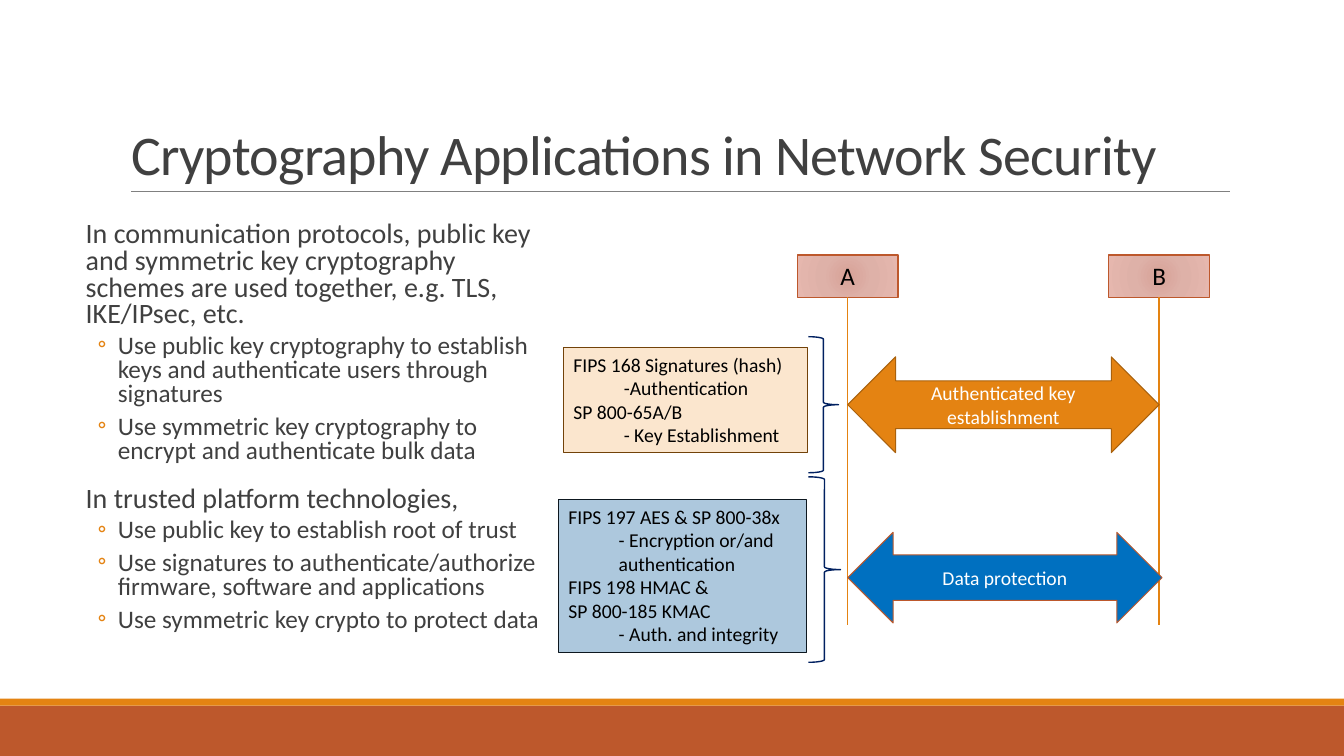
"""Build the slide on cryptography applications in network security."""
from lxml import etree
from pptx import Presentation
from pptx.dml.color import RGBColor
from pptx.enum.shapes import MSO_CONNECTOR, MSO_SHAPE
from pptx.enum.text import MSO_ANCHOR, MSO_AUTO_SIZE, PP_ALIGN
from pptx.oxml import parse_xml
from pptx.oxml.ns import qn
from pptx.util import Pt

RECTANGLE, BRACE = MSO_SHAPE.RECTANGLE, MSO_SHAPE.RIGHT_BRACE
DOUBLE_ARROW = MSO_SHAPE.LEFT_RIGHT_ARROW
STRAIGHT = MSO_CONNECTOR.STRAIGHT
TOP, MIDDLE, BOTTOM = MSO_ANCHOR.TOP, MSO_ANCHOR.MIDDLE, MSO_ANCHOR.BOTTOM
LEFT, CENTER = PP_ALIGN.LEFT, PP_ALIGN.CENTER
FIXED, GROW = MSO_AUTO_SIZE.NONE, MSO_AUTO_SIZE.SHAPE_TO_FIT_TEXT

ORANGE = RGBColor(0xE4, 0x83, 0x12)
RUST = RGBColor(0xBD, 0x58, 0x2C)
BROWN = RGBColor(0xA9, 0x61, 0x0D)
DARK_BROWN = RGBColor(0x72, 0x42, 0x09)
CREAM = RGBColor(0xFB, 0xE6, 0xCE)
BLUE = RGBColor(0x00, 0x70, 0xC0)
PALE_BLUE = RGBColor(0xAD, 0xC8, 0xDD)
INK = RGBColor(0x0D, 0x17, 0x1F)
NAVY = RGBColor(0x00, 0x20, 0x60)
GRAY = RGBColor(0x80, 0x80, 0x80)
CHARCOAL = RGBColor(0x40, 0x40, 0x40)
BLACK = RGBColor(0, 0, 0)
WHITE = RGBColor(0xFF, 0xFF, 0xFF)
NODE_STOPS = [(0, RGBColor(0xD7, 0xA1, 0x97)), (45, RGBColor(0xDE, 0xB1, 0xA8)),
              (100, RGBColor(0xE6, 0xB7, 0xAE))]

FONT = "Calibri"
SLIDE_WIDTH, SLIDE_HEIGHT = 960, 540
TITLE = "Cryptography Applications in Network Security"
TITLE_BOX = (86.4, 22.3, 792, 114.5)
BODY_BOX = (54, 154.8, 337, 316.8)
BODY = [
    (0, "In communication protocols, public key and symmetric key cryptography "
        "schemes are used together, e.g. TLS, IKE/IPsec, etc."),
    (1, "Use public key cryptography to establish keys and authenticate users "
        "through signatures"),
    (1, "Use symmetric key cryptography to encrypt and authenticate bulk data"),
    (0, "In trusted platform technologies,"),
    (1, "Use public key to establish root of trust"),
    (1, "Use signatures to authenticate/authorize firmware, software and applications"),
    (1, "Use symmetric key crypto to protect data"),
]
BODY_LEVELS = [
    {"size": 20, "before": 12, "after": 2, "margin": 7.2, "hang": 7.2, "bullet": " "},
    {"size": 18, "before": 2, "after": 4, "margin": 30.2, "hang": 14.4, "bullet": "◦"},
]
BARS = [(504, 36, RUST), (499, 5, ORANGE)]
PARTIES = [("A", 605.5), ("B", 828)]
NODE_TOP, NODE_WIDTH, NODE_HEIGHT, LIFELINE_END = 182.2, 72, 30.2, 446.4
EXCHANGES = [
    ("Authenticated key establishment", (605.5, 254.9, 222.5, 68.4), ORANGE, BROWN),
    ("Data protection", (605.5, 380.2, 224.6, 64.8), BLUE, RUST),
]
STANDARDS = [
    ((402.5, 248.2, 174.2, 75.1), CREAM, DARK_BROWN, (577.4, 240.5, 21.6, 97.2), [
        (0, "FIPS 168 Signatures (hash)"), (1, "-Authentication"),
        (0, "SP 800-65A/B"), (1, "- Key Establishment")]),
    ((398.9, 356.8, 177.1, 109), PALE_BLUE, INK, (577.4, 340.6, 23, 132.5), [
        (0, "FIPS 197 AES & SP 800-38x"), (1, "- Encryption or/and authentication"),
        (0, "FIPS 198 HMAC &"), (0, "SP 800-185 KMAC"), (1, "- Auth. and integrity")]),
]
STANDARD_INDENT = 36


def apply(target, values):
    for name, value in values.items():
        setattr(target, name, value)


def place(shape, box):
    names = ("left", "top", "width", "height")
    apply(shape, dict(zip(names, map(Pt, box))))


def add_paragraphs(frame, lines, size, color, align):
    for index, (level, text) in enumerate(lines):
        paragraph = frame.paragraphs[0] if index == 0 else frame.add_paragraph()
        apply(paragraph, {"text": text, "level": level, "alignment": align})
        apply(paragraph.runs[0].font, {"name": FONT, "size": Pt(size)})
        paragraph.runs[0].font.color.rgb = color


def add_shape(slide, kind, box, fill=None, line=None, weight=0.75):
    shape = slide.shapes.add_shape(kind, *map(Pt, box))
    shape.shadow.inherit = False
    if fill is None:
        shape.fill.background()
    else:
        shape.fill.solid()
        shape.fill.fore_color.rgb = fill
    if line is None:
        shape.line.fill.background()
    else:
        shape.line.color.rgb = line
        shape.line.width = Pt(weight)
    return shape


def add_line(slide, start, end, color, weight):
    line = slide.shapes.add_connector(STRAIGHT, *map(Pt, start + end))
    line.line.color.rgb = color
    line.line.width = Pt(weight)
    etree.SubElement(line._element.spPr, qn("a:effectLst"))


def shade_node(shape):
    stops = "".join(f'<a:gs pos="{position * 1000}"><a:srgbClr val="{color}"/></a:gs>'
                    for position, color in NODE_STOPS)
    gradient = parse_xml(
        '<a:gradFill xmlns:a="http://schemas.openxmlformats.org/drawingml/2006/main">'
        f'<a:gsLst>{stops}</a:gsLst><a:path path="circle">'
        '<a:fillToRect l="100000" t="100000" r="100000" b="100000"/></a:path></a:gradFill>')
    properties = shape._element.spPr
    properties.replace(properties.find(qn("a:noFill")), gradient)


def fill_title(title):
    place(title, TITLE_BOX)
    frame = title.text_frame
    apply(frame, {"vertical_anchor": BOTTOM, "auto_size": FIXED, "word_wrap": True})
    add_paragraphs(frame, [(0, TITLE)], 40, CHARCOAL, LEFT)
    frame.paragraphs[0].line_spacing = 0.85
    frame.paragraphs[0].runs[0].font._element.set("spc", "-50")


def fill_body(body):
    place(body, BODY_BOX)
    frame = body.text_frame
    apply(frame, {"vertical_anchor": TOP, "auto_size": FIXED, "word_wrap": True,
                  "margin_left": 0, "margin_right": 0})
    add_paragraphs(frame, BODY, 18, CHARCOAL, LEFT)
    for paragraph in frame.paragraphs:
        style = BODY_LEVELS[paragraph.level]
        apply(paragraph, {"line_spacing": 0.8, "space_before": Pt(style["before"]),
                          "space_after": Pt(style["after"])})
        paragraph.runs[0].font.size = Pt(style["size"])
        properties = paragraph._element.get_or_add_pPr()
        properties.set("marL", str(Pt(style["margin"])))
        properties.set("indent", str(-Pt(style["hang"])))
        bullet_color = etree.SubElement(properties, qn("a:buClr"))
        etree.SubElement(bullet_color, qn("a:srgbClr"), val=str(ORANGE))
        etree.SubElement(properties, qn("a:buFont"), typeface=FONT)
        etree.SubElement(properties, qn("a:buChar"), char=style["bullet"])


def draw_exchange(slide):
    for name, center in PARTIES:
        box = (center - NODE_WIDTH / 2, NODE_TOP, NODE_WIDTH, NODE_HEIGHT)
        node = add_shape(slide, RECTANGLE, box, line=RUST, weight=1)
        shade_node(node)
        apply(node.text_frame, {"vertical_anchor": TOP, "auto_size": GROW})
        add_paragraphs(node.text_frame, [(0, name)], 18, BLACK, CENTER)
        add_line(slide, (center, NODE_TOP + NODE_HEIGHT), (center, LIFELINE_END), ORANGE, 1)
    for text, box, fill, line in EXCHANGES:
        arrow = add_shape(slide, DOUBLE_ARROW, box, fill, line)
        apply(arrow.text_frame, {"vertical_anchor": MIDDLE, "word_wrap": True})
        add_paragraphs(arrow.text_frame, [(0, text)], 14, WHITE, CENTER)


def draw_standards(slide):
    for box, fill, line, brace_box, lines in STANDARDS:
        frame = add_shape(slide, RECTANGLE, box, fill, line).text_frame
        apply(frame, {"vertical_anchor": TOP, "auto_size": GROW, "word_wrap": True})
        add_paragraphs(frame, lines, 14, BLACK, LEFT)
        for paragraph in frame.paragraphs:
            margin = Pt(STANDARD_INDENT * paragraph.level)
            paragraph._element.get_or_add_pPr().set("marL", str(margin))
        add_shape(slide, BRACE, brace_box, line=NAVY, weight=1)


def main():
    presentation = Presentation()
    apply(presentation, {"slide_width": Pt(SLIDE_WIDTH), "slide_height": Pt(SLIDE_HEIGHT)})
    slide = presentation.slides.add_slide(presentation.slide_layouts[1])
    for top, height, color in BARS:
        add_shape(slide, RECTANGLE, (0, top, SLIDE_WIDTH, height), color)
    add_line(slide, (93.6, 136.8), (878.4, 136.8), GRAY, 0.5)
    fill_title(slide.shapes.title)
    fill_body(slide.placeholders[1])
    draw_exchange(slide)
    draw_standards(slide)
    presentation.save("out.pptx")


if __name__ == "__main__":
    main()
